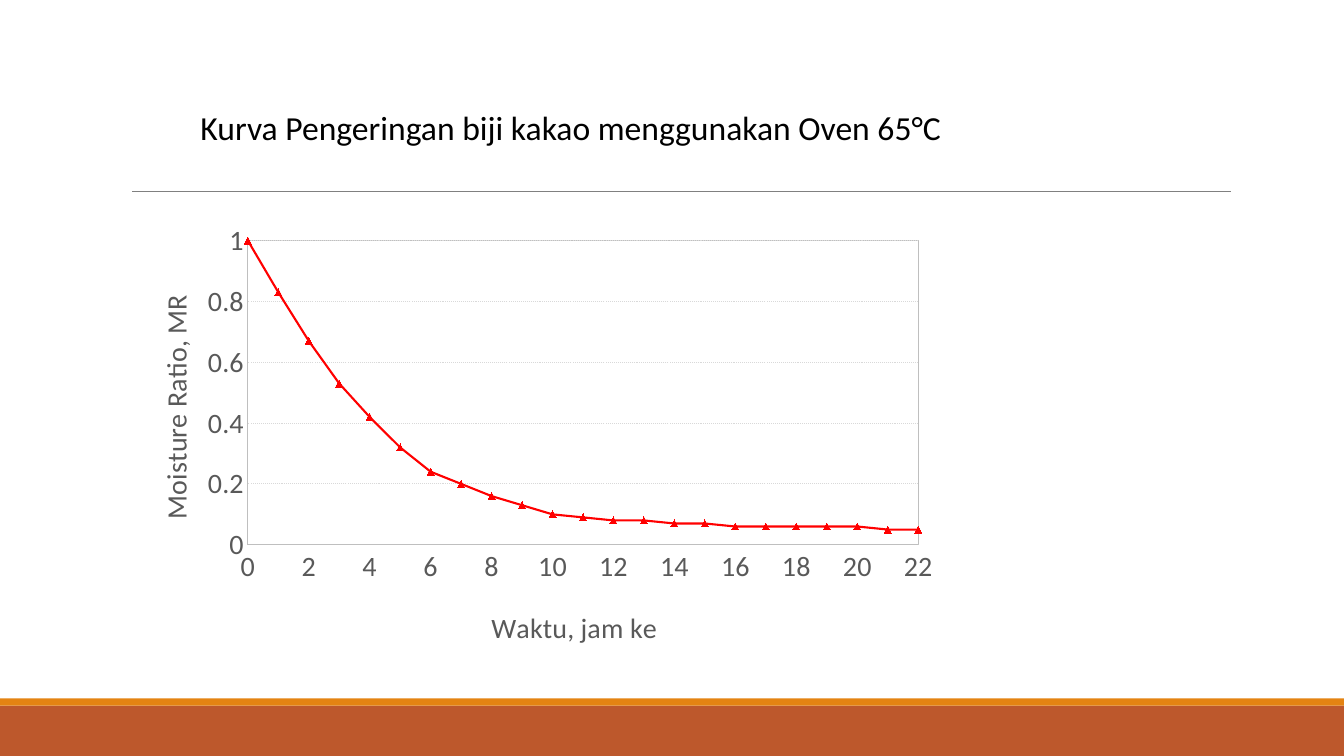
from dataclasses import dataclass

import pptx
import pptx.chart.data
import pptx.dml.color
import pptx.enum.chart
import pptx.enum.dml
import pptx.enum.shapes
import pptx.oxml
import pptx.oxml.ns
import pptx.util
from pptx.util import Inches

qn = pptx.oxml.ns.qn


@dataclass(frozen=True)
class Theme:
    font: str = "Calibri"
    heading_size: int = 24
    chart_size: int = 20
    paper: str = "FFFFFF"
    heading: str = "000000"
    axis_text: str = "595959"
    axis_line: str = "BFBFBF"
    grid: str = "D9D9D9"
    curve: str = "FF0000"
    rule: str = "808080"
    band: str = "BD582C"
    stripe: str = "E48312"


THEME = Theme()
MOISTURE_RATIOS = [1, 0.83, 0.67, 0.53, 0.42, 0.32, 0.24, 0.2, 0.16, 0.13, 0.1, 0.09,
                   0.08, 0.08, 0.07, 0.07, 0.06, 0.06, 0.06, 0.06, 0.06, 0.05, 0.05]


def rgb(color):
    return pptx.dml.color.RGBColor.from_string(color)


def style_font(font, size, color):
    font.name = THEME.font
    font.size = pptx.util.Pt(size)
    font.bold = False
    font.color.rgb = rgb(color)


def style_line(line, color, width):
    line.color.rgb = rgb(color)
    line.width = pptx.util.Pt(width)


def add_footer(slide, left, top, width, height):
    """Draw a thin stripe on top of a wide band."""
    stripe_height = 0.07
    for y, part_height, color in (
        (top + stripe_height, height - stripe_height, THEME.band),
        (top, stripe_height, THEME.stripe),
    ):
        bar = slide.shapes.add_shape(pptx.enum.shapes.MSO_SHAPE.RECTANGLE, Inches(left),
                                     Inches(y), Inches(width), Inches(part_height))
        bar.shadow.inherit = False
        bar.fill.solid()
        bar.fill.fore_color.rgb = rgb(color)
        bar.line.fill.background()


def add_rule(slide, left, top, width):
    rule = slide.shapes.add_connector(pptx.enum.shapes.MSO_CONNECTOR.STRAIGHT, Inches(left),
                                      Inches(top), Inches(left + width), Inches(top))
    style_line(rule.line, THEME.rule, 0.5)
    rule._element.spPr.append(pptx.oxml.parse_xml(
        f"<a:effectLst {pptx.oxml.ns.nsdecls('a')}/>"))


def add_heading(slide, left, top, width, height):
    heading = slide.shapes.add_textbox(Inches(left), Inches(top), Inches(width), Inches(height))
    heading.text_frame.word_wrap = True
    heading.text_frame.text = "Kurva Pengeringan biji kakao menggunakan Oven 65°C"
    style_font(heading.text_frame.paragraphs[0].runs[0].font, THEME.heading_size, THEME.heading)


def set_layout(parent, **fractions):
    """Place a chart part by fractions of the chart's width and height."""
    layout = parent.find(qn("c:layout"))
    if layout is None:
        layout = parent.makeelement(qn("c:layout"), {})
        text = parent.find(qn("c:tx"))
        parent.insert(0 if text is None else 1, layout)
    settings = {"xMode": "edge", "yMode": "edge", **fractions}
    if "w" in fractions:
        settings = {"layoutTarget": "inner", **settings}
    values = "".join(f'<c:{key} val="{value}"/>' for key, value in settings.items())
    layout.append(pptx.oxml.parse_xml(
        f"<c:manualLayout {pptx.oxml.ns.nsdecls('c')}>{values}</c:manualLayout>"))


def style_axis(axis, title, maximum, step, x, y):
    axis.minimum_scale = 0
    axis.maximum_scale = maximum
    axis.major_unit = step
    axis.major_tick_mark = axis.minor_tick_mark = pptx.enum.chart.XL_TICK_MARK.NONE
    axis.tick_labels.number_format = "General"
    axis.tick_labels.number_format_is_linked = False
    style_font(axis.tick_labels.font, THEME.chart_size, THEME.axis_text)
    style_line(axis.format.line, THEME.axis_line, 0.75)
    axis.axis_title.text_frame.text = title
    style_font(axis.axis_title.text_frame.paragraphs[0].runs[0].font,
               THEME.chart_size, THEME.axis_text)
    set_layout(axis.axis_title._element, x=x, y=y)


def frame_plot(plot_area):
    set_layout(plot_area, x=0.152, y=0.06, w=0.81, h=0.68)
    plot_area.append(pptx.oxml.parse_xml(
        f"<c:spPr {pptx.oxml.ns.nsdecls('c', 'a')}><a:noFill/><a:ln w=\"9525\"><a:solidFill>"
        f'<a:srgbClr val="{THEME.axis_line}"/></a:solidFill></a:ln></c:spPr>'))


def style_curve(curve):
    curve.smooth = True
    style_line(curve.format.line, THEME.curve, 1.5)
    curve.marker.style = pptx.enum.chart.XL_MARKER_STYLE.TRIANGLE
    curve.marker.size = 5
    curve.marker.format.fill.solid()
    curve.marker.format.fill.fore_color.rgb = rgb(THEME.curve)
    style_line(curve.marker.format.line, THEME.curve, 0.75)


def add_drying_chart(slide, left, top, width, height):
    drying = pptx.chart.data.XyChartData()
    series = drying.add_series("Series 1")
    for hour, ratio in enumerate(MOISTURE_RATIOS):
        series.add_data_point(hour, ratio)
    chart = slide.shapes.add_chart(pptx.enum.chart.XL_CHART_TYPE.XY_SCATTER_SMOOTH, Inches(left),
                                   Inches(top), Inches(width), Inches(height), drying).chart
    chart.has_legend = False
    chart.has_title = False
    style_font(chart.font, THEME.chart_size, THEME.heading)

    hours, ratios = chart.category_axis, chart.value_axis
    style_axis(hours, "Waktu, jam ke", 22, 2, x=0.44, y=0.87)
    style_axis(ratios, "Moisture Ratio, MR", 1, 0.2, x=0.035, y=0.17)
    hours.has_major_gridlines = False
    ratios.has_major_gridlines = True
    grid = ratios.major_gridlines.format.line
    style_line(grid, THEME.grid, 0.75)
    grid.dash_style = pptx.enum.dml.MSO_LINE.ROUND_DOT

    chart.plots[0].vary_by_categories = False
    style_curve(chart.plots[0].series[0])
    frame_plot(chart._chartSpace.chart.plotArea)


def main():
    deck = pptx.Presentation()
    deck.slide_width, deck.slide_height = Inches(13.33), Inches(7.5)
    slide = deck.slides.add_slide(deck.slide_layouts[6])
    slide.background.fill.solid()
    slide.background.fill.fore_color.rgb = rgb(THEME.paper)
    add_footer(slide, 0, 6.93, 13.33, 0.57)
    add_rule(slide, 1.31, 1.9, 10.9)
    add_heading(slide, 1.89, 1.01, 8.94, 0.5)
    add_drying_chart(slide, 1.21, 2.12, 8.21, 4.44)
    deck.save("out.pptx")


if __name__ == "__main__":
    main()
